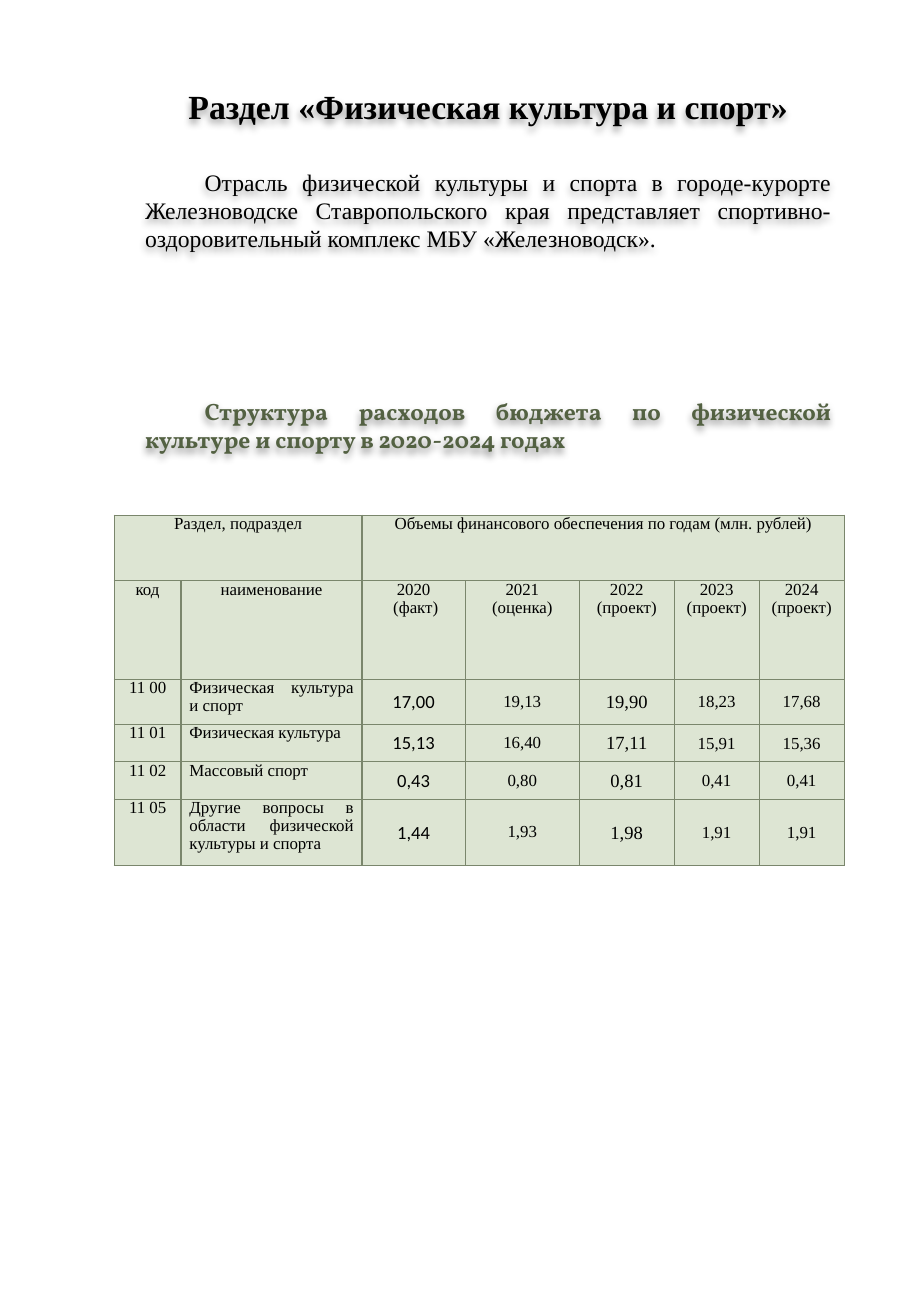
from lxml.etree import SubElement
from pptx import Presentation
from pptx.dml.color import RGBColor
from pptx.enum.shapes import MSO_SHAPE
from pptx.enum.text import MSO_ANCHOR, PP_ALIGN
from pptx.oxml.ns import qn
from pptx.util import Inches, Pt

COLORS = {"text": "000000", "heading": "536142", "cell": "DDE5D3", "border": "7A866C"}
SERIF = "Times New Roman"

TITLE = "Раздел «Физическая культура и спорт»"
INTRO = ("Отрасль физической культуры и спорта в городе-курорте Железноводске "
         "Ставропольского края представляет спортивно-оздоровительный комплекс "
         "МБУ «Железноводск».")
HEADING = "Структура расходов бюджета по физической культуре и спорту в 2020-2024 годах"

COLUMN_WIDTHS = [0.55, 1.49, 0.85, 0.94, 0.78, 0.7, 0.7]
ROW_HEIGHTS = [0.54, 0.81, 0.37, 0.31, 0.31, 0.54]
BUDGET = [
    ["Раздел, подраздел", "", "Объемы финансового обеспечения по годам (млн. рублей)",
     "", "", "", ""],
    ["код", "наименование", "2020\n (факт)", "2021 (оценка)", "2022 (проект)",
     "2023 (проект)", "2024 (проект)"],
    ["11 00", "Физическая культура и спорт", "17,00", "19,13", "19,90", "18,23", "17,68"],
    ["11 01", "Физическая культура", "15,13", "16,40", "17,11", "15,91", "15,36"],
    ["11 02", "Массовый спорт", "0,43", "0,80", "0,81", "0,41", "0,41"],
    ["11 05", "Другие вопросы в области физической культуры и спорта",
     "1,44", "1,93", "1,98", "1,91", "1,91"],
]
HEADER_ROWS = 2
LABEL_COLUMNS = 2
# Font, size and side inset of the values in each year column
YEAR_STYLES = [("Calibri", 11, 0.01), (SERIF, 10, 0.07), (SERIF, 11, 0.01),
               (SERIF, 10, 0.01), (SERIF, 10, 0.01)]


def format_paragraph(paragraph, font_name, size, align, color="text", bold=False):
    paragraph.alignment = align
    for run in paragraph.runs:
        run.font.name = font_name
        run.font.size = Pt(size)
        run.font.bold = bold
        run.font.color.rgb = RGBColor.from_string(COLORS[color])


def add_text_shadow(panel):
    panel.shadow.inherit = False
    effects = panel._element.spPr.find(qn("a:effectLst"))
    shadow = SubElement(effects, qn("a:outerShdw"), blurRad="57150", dist="38100",
                        dir="5400000", algn="ctr", rotWithShape="0")
    tint = SubElement(shadow, qn("a:srgbClr"), val=COLORS["text"])
    SubElement(tint, qn("a:alpha"), val="40000")


def add_intro_panel(slide, left, top, width, height):
    panel = slide.shapes.add_shape(MSO_SHAPE.ROUNDED_RECTANGLE, Inches(left), Inches(top),
                                   Inches(width), Inches(height))
    panel.fill.background()
    panel.line.fill.background()
    add_text_shadow(panel)

    frame = panel.text_frame
    frame.word_wrap = True
    frame.vertical_anchor = MSO_ANCHOR.TOP
    frame.text = "\n".join([TITLE, INTRO, HEADING])
    title, intro, heading = frame.paragraphs
    format_paragraph(title, SERIF, 20, PP_ALIGN.CENTER, bold=True)
    format_paragraph(intro, SERIF, 14, PP_ALIGN.JUSTIFY)
    format_paragraph(heading, "Vollkorn", 14, PP_ALIGN.JUSTIFY, "heading", True)
    for paragraph, gap in ((intro, 25), (heading, 86)):
        paragraph.space_before = Pt(gap)
        paragraph.line_spacing = Pt(16.6)
        paragraph._p.get_or_add_pPr().set("indent", str(Inches(0.49)))


def style_cell(cell):
    properties = cell._tc.get_or_add_tcPr()
    for side in ("lnL", "lnR", "lnT", "lnB"):
        border = SubElement(properties, qn(f"a:{side}"), w=str(Pt(0.75)))
        fill = SubElement(border, qn("a:solidFill"))
        SubElement(fill, qn("a:srgbClr"), val=COLORS["border"])
    cell.fill.solid()
    cell.fill.fore_color.rgb = RGBColor.from_string(COLORS["cell"])


def fill_cell(cell, text, row, column):
    is_value = row >= HEADER_ROWS and column >= LABEL_COLUMNS
    font_name, size, inset = (YEAR_STYLES[column - LABEL_COLUMNS] if is_value
                              else (SERIF, 10, 0.07))
    is_name = row >= HEADER_ROWS and column == 1
    cell.margin_left = cell.margin_right = Inches(inset)
    cell.margin_top = Inches(0.01 if inset == 0.01 else 0)
    cell.margin_bottom = 0
    cell.vertical_anchor = MSO_ANCHOR.MIDDLE if is_value else MSO_ANCHOR.TOP
    cell.text_frame.text = text
    for paragraph in cell.text_frame.paragraphs:
        format_paragraph(paragraph, font_name, size,
                         PP_ALIGN.JUSTIFY if is_name else PP_ALIGN.CENTER)
        if not is_value:
            paragraph.line_spacing = Pt(10.7)


def add_budget_table(slide, left, top):
    table = slide.shapes.add_table(
        len(ROW_HEIGHTS), len(COLUMN_WIDTHS), Inches(left), Inches(top),
        Inches(sum(COLUMN_WIDTHS)), Inches(sum(ROW_HEIGHTS))).table
    table.first_row = table.horz_banding = False
    for column, width in zip(table.columns, COLUMN_WIDTHS):
        column.width = Inches(width)
    for row, height in zip(table.rows, ROW_HEIGHTS):
        row.height = Inches(height)
    for r, texts in enumerate(BUDGET):
        for c, text in enumerate(texts):
            style_cell(table.cell(r, c))
            fill_cell(table.cell(r, c), text, r, c)
    # Header groups
    table.cell(0, 0).merge(table.cell(0, LABEL_COLUMNS - 1))
    table.cell(0, LABEL_COLUMNS).merge(table.cell(0, len(COLUMN_WIDTHS) - 1))


def main():
    presentation = Presentation()
    presentation.slide_width = Inches(7.5)
    presentation.slide_height = Inches(10.83)
    slide = presentation.slides.add_slide(presentation.slide_layouts[6])
    add_intro_panel(slide, 0.78, 0.34, 6.48, 9.77)
    add_budget_table(slide, 0.94, 4.24)
    presentation.save("out.pptx")


if __name__ == "__main__":
    main()
